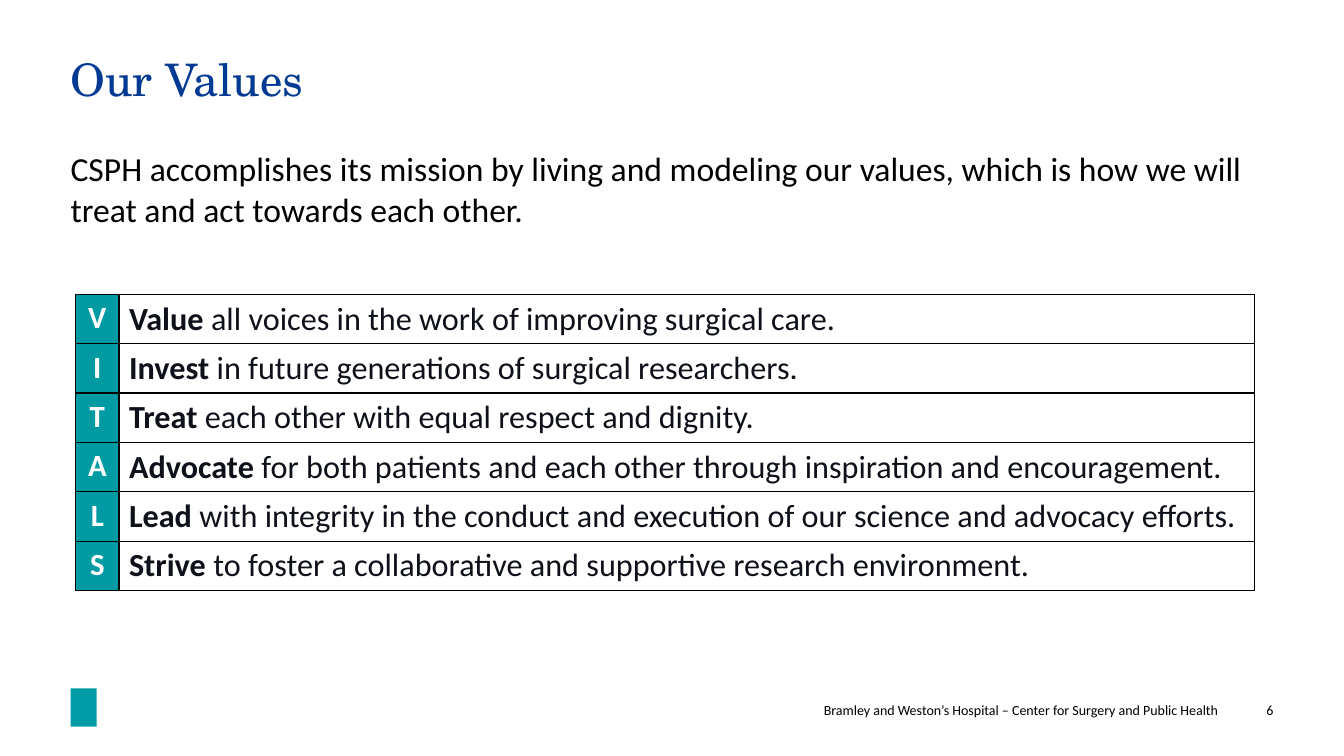
from lxml import etree
from pptx import Presentation
from pptx.dml.color import RGBColor
from pptx.enum.shapes import MSO_SHAPE
from pptx.enum.text import MSO_ANCHOR, PP_ALIGN
from pptx.oxml.ns import qn
from pptx.util import Inches, Pt

LEFT, CENTER, RIGHT = PP_ALIGN.LEFT, PP_ALIGN.CENTER, PP_ALIGN.RIGHT
TOP, BOTTOM = MSO_ANCHOR.TOP, MSO_ANCHOR.BOTTOM
RECTANGLE = MSO_SHAPE.RECTANGLE

BLACK = RGBColor(0x00, 0x00, 0x00)
WHITE = RGBColor(0xFF, 0xFF, 0xFF)
NAVY = RGBColor(0x00, 0x3A, 0x93)
INK = RGBColor(0x0E, 0x10, 0x1A)
TEAL = RGBColor(0x00, 0x9A, 0xA3)
EMBLEM_TEAL = RGBColor(0x00, 0x9C, 0xA6)

BODY_FONT = "Calibri"
TITLE_FONT = "TeX Gyre Schola"
MARGIN = 0.7
CONTENT_WIDTH = 11.92
ROW_HEIGHT = 0.49
COLUMN_WIDTHS = (0.43, 11.26)

INTRODUCTION = (
    "CSPH accomplishes its mission by living and modeling our values, "
    "which is how we will treat and act towards each other."
)
FOOTER = "Bramley and Weston’s Hospital – Center for Surgery and Public Health"
VALUES = (
    ("Value", " all voices in the work of improving surgical care."),
    ("Invest", " in future generations of surgical researchers."),
    ("Treat", " each other with equal respect and dignity."),
    ("Advocate", " for both patients and each other through inspiration and encouragement."),
    ("Lead", " with integrity in the conduct and execution of our science and advocacy efforts."),
    ("Strive", " to foster a collaborative and supportive research environment."),
)


def add_run(paragraph, text, size, color, bold=False, font=BODY_FONT):
    """Append one formatted run to a paragraph."""
    run = paragraph.add_run()
    run.text = text
    run.font.name = font
    run.font.size = Pt(size)
    run.font.bold = bold
    run.font.color.rgb = color


def prepare_frame(shape, alignment, anchor):
    """Remove the insets of a text shape and return its first paragraph."""
    frame = shape.text_frame
    frame.word_wrap = True
    frame.vertical_anchor = anchor
    frame.margin_left = frame.margin_right = Inches(0)
    frame.margin_top = frame.margin_bottom = Inches(0)
    paragraph = frame.paragraphs[0]
    paragraph.alignment = alignment
    return paragraph


def set_title(slide, text):
    """Place and format the title placeholder."""
    title = slide.shapes.title
    title.left, title.top = Inches(MARGIN), Inches(0.57)
    title.width, title.height = Inches(CONTENT_WIDTH), Inches(1.05)
    paragraph = prepare_frame(title, LEFT, TOP)
    paragraph.line_spacing = 0.9
    add_run(paragraph, text, 32, NAVY, font=TITLE_FONT)


def add_text(slide, position, text, size, alignment=LEFT, anchor=TOP):
    """Add a text box holding one black paragraph."""
    box = slide.shapes.add_textbox(*map(Inches, position))
    add_run(prepare_frame(box, alignment, anchor), text, size, BLACK)


def add_borders(cell):
    """Draw a thin black line on each side of a table cell."""
    properties = cell._tc.get_or_add_tcPr()
    for side in ("a:lnL", "a:lnR", "a:lnT", "a:lnB"):
        line = etree.SubElement(properties, qn(side), w=str(Pt(1)))
        fill = etree.SubElement(line, qn("a:solidFill"))
        etree.SubElement(fill, qn("a:srgbClr"), val=str(BLACK))


def add_values_table(slide):
    """Add the table whose first column spells the initials of the values."""
    table = slide.shapes.add_table(
        len(VALUES), len(COLUMN_WIDTHS), Inches(0.75), Inches(2.92),
        Inches(sum(COLUMN_WIDTHS)), Inches(ROW_HEIGHT * len(VALUES)),
    ).table
    table.first_row = table.horz_banding = False
    for column, width in zip(table.columns, COLUMN_WIDTHS):
        column.width = Inches(width)
    for row, (verb, rest) in zip(table.rows, VALUES):
        row.height = Inches(ROW_HEIGHT)
        initial_cell, value_cell = row.cells
        add_borders(initial_cell)
        initial_cell.fill.solid()
        initial_cell.fill.fore_color.rgb = TEAL
        paragraph = initial_cell.text_frame.paragraphs[0]
        paragraph.alignment = CENTER
        add_run(paragraph, verb[0], 22, WHITE, bold=True)
        add_borders(value_cell)
        value_cell.fill.background()
        paragraph = value_cell.text_frame.paragraphs[0]
        add_run(paragraph, verb, 23, INK, bold=True)
        add_run(paragraph, rest, 23, INK)


def add_emblem(slide):
    """Add the plain emblem block at the foot of the slide."""
    emblem = slide.shapes.add_shape(
        RECTANGLE, Inches(MARGIN), Inches(6.83), Inches(0.26), Inches(0.38))
    emblem.shadow.inherit = False
    emblem.fill.solid()
    emblem.fill.fore_color.rgb = EMBLEM_TEAL
    emblem.line.fill.background()


def main():
    """Build the values slide and save it."""
    presentation = Presentation()
    presentation.slide_width = Inches(13.33)
    presentation.slide_height = Inches(7.5)
    slide = presentation.slides.add_slide(presentation.slide_layouts[5])
    set_title(slide, "Our Values")
    add_text(slide, (MARGIN, 1.47, CONTENT_WIDTH, 0.9), INTRODUCTION, 24)
    add_values_table(slide)
    add_emblem(slide)
    add_text(slide, (3.65, 6.96, 8.43, 0.17), FOOTER, 10, RIGHT, BOTTOM)
    add_text(slide, (12.25, 6.96, 0.38, 0.17), "6", 10, RIGHT)
    presentation.save("out.pptx")


if __name__ == "__main__":
    main()
